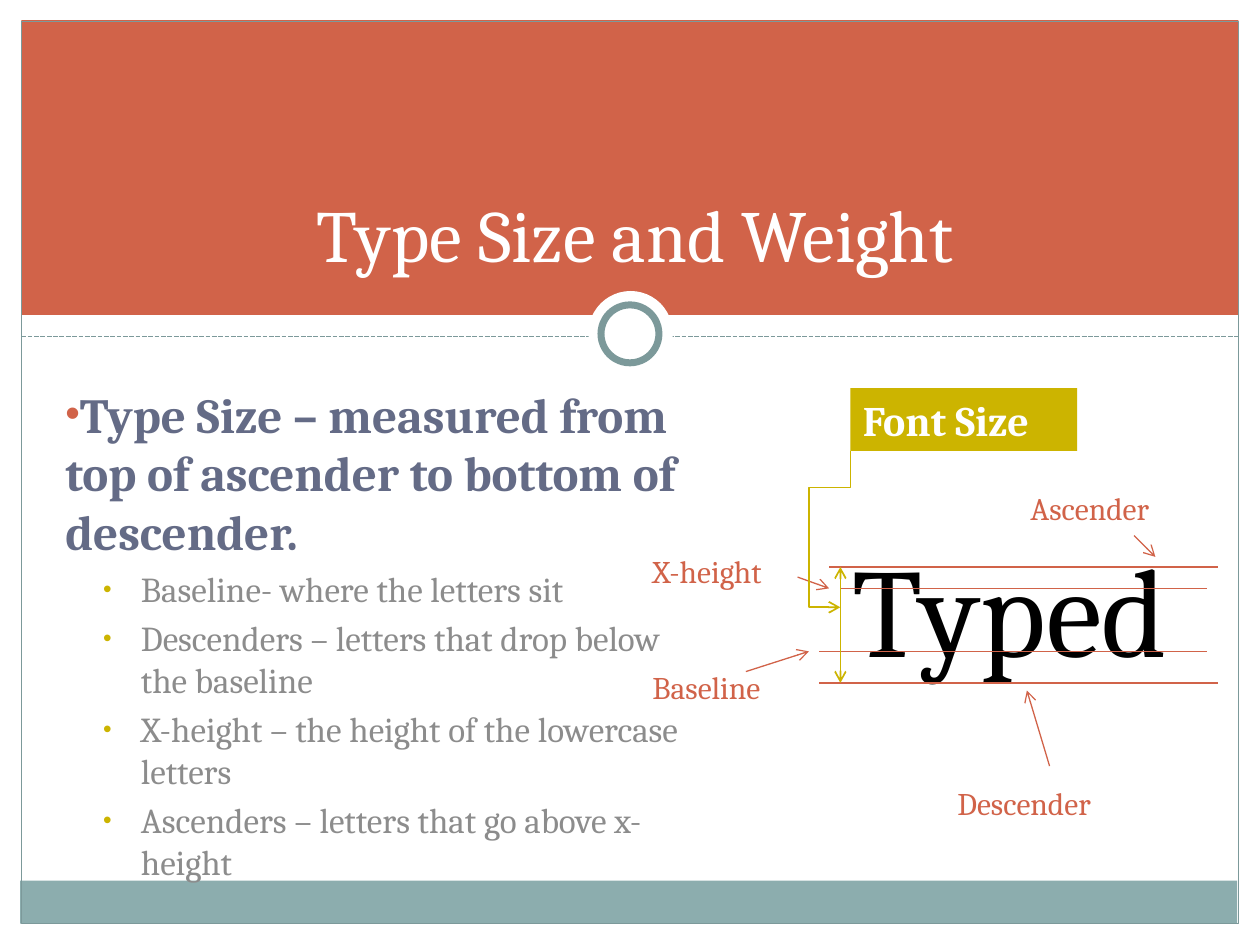
from lxml import etree
from pptx import Presentation
from pptx.dml.color import RGBColor
from pptx.enum.dml import MSO_LINE
from pptx.enum.shapes import MSO_CONNECTOR, MSO_SHAPE
from pptx.enum.text import MSO_ANCHOR, PP_ALIGN
from pptx.oxml.ns import qn
from pptx.util import Inches, Pt

RECTANGLE, OVAL = MSO_SHAPE.RECTANGLE, MSO_SHAPE.OVAL
STRAIGHT = MSO_CONNECTOR.STRAIGHT
SHORT_DASH = MSO_LINE.SQUARE_DOT
TOP, BOTTOM = MSO_ANCHOR.TOP, MSO_ANCHOR.BOTTOM
LEFT, CENTER = PP_ALIGN.LEFT, PP_ALIGN.CENTER

FONT = "Cambria"
COLORS = {
    "white": "FFFFFF",
    "black": "000000",
    "coral": "D16349",
    "sage": "8CADAE",
    "teal": "7C999A",
    "gold": "CCB400",
    "slate": "646B86",
    "gray": "8C8C8C",
}
ASCENDER_Y, X_HEIGHT_Y, BASELINE_Y, DESCENDER_Y = 4.5, 4.67, 5.17, 5.42
MEASURE_X = 6.67

GUIDES = [
    (6.58, 9.67, ASCENDER_Y),
    (MEASURE_X, 9.58, X_HEIGHT_Y),
    (6.5, 9.58, BASELINE_Y),
    (6.5, 9.67, DESCENDER_Y),
]
LABELS = [
    ("Ascender", (8.08, 3.83, 1.25, 0.4), (9, 4.25), (9.17, 4.42)),
    ("Descender", (7.5, 6.17, 1.38, 0.4), (8.33, 6.08), (8.15, 5.48)),
    ("Baseline", (5.08, 5.25, 1.14, 0.4), (5.92, 5.33), (6.42, BASELINE_Y)),
    ("X-height", (5.08, 4.33, 1.18, 0.4), (6.33, 4.58), (6.58, X_HEIGHT_Y)),
]
DEFINITION = "Type Size – measured from top of ascender to bottom of descender."
TERMS = [
    "Baseline- where the letters sit",
    "Descenders – letters that drop below the baseline",
    "X-height – the height of the lowercase letters",
    "Ascenders – letters that go above x-height",
]


def rgb(name):
    """Return the palette colour with this name."""
    return RGBColor.from_string(COLORS[name])


def style_line(line, color, width):
    """Give a line its colour and its width in points."""
    line.color.rgb = rgb(color)
    line.width = Pt(width)


def add_panel(slide, kind, box, fill=None, outline=None, width=0.75):
    """Add a preset shape with an optional fill and outline."""
    panel = slide.shapes.add_shape(kind, *map(Inches, box))
    panel.shadow.inherit = False
    if fill:
        panel.fill.solid()
        panel.fill.fore_color.rgb = rgb(fill)
    else:
        panel.fill.background()
    if outline:
        style_line(panel.line, outline, width)
    else:
        panel.line.fill.background()


def add_arrowheads(line, ends):
    """Put open arrowheads on the named ends of a line."""
    for end in ends:
        etree.SubElement(line._get_or_add_ln(), qn(f"a:{end}"), type="arrow")


def add_rule(slide, start, end, color="coral", width=0.75, ends=()):
    """Add a straight connector and return it."""
    rule = slide.shapes.add_connector(STRAIGHT, *map(Inches, (*start, *end)))
    etree.SubElement(rule._element.spPr, qn("a:effectLst"))
    style_line(rule.line, color, width)
    add_arrowheads(rule.line, ends)
    return rule


def add_elbow(slide, points, color, width):
    """Add a bent leader that ends in an arrowhead."""
    start, *bends = [tuple(map(Inches, point)) for point in points]
    builder = slide.shapes.build_freeform(*start)
    builder.add_line_segments(bends, close=False)
    leader = builder.convert_to_shape()
    leader.shadow.inherit = False
    leader.fill.background()
    style_line(leader.line, color, width)
    add_arrowheads(leader.line, ["tailEnd"])


def write(paragraph, text, size, color, bold=False):
    """Write one styled run of text into a paragraph."""
    paragraph.text = text
    font = paragraph.runs[0].font
    font.name, font.size, font.bold = FONT, Pt(size), bold
    font.color.rgb = rgb(color)


def add_text(slide, box, text, size, color, bold=False, align=LEFT, anchor=TOP):
    """Add a text box with one paragraph and return it."""
    text_box = slide.shapes.add_textbox(*map(Inches, box))
    frame = text_box.text_frame
    frame.word_wrap = True
    frame.vertical_anchor = anchor
    frame.paragraphs[0].alignment = align
    write(frame.paragraphs[0], text, size, color, bold)
    return text_box


def add_bullet(paragraph, color, percent, space, margin=0, indent=0):
    """Give a paragraph a coloured bullet, spacing and indents."""
    paragraph.space_before = Pt(space)
    properties = paragraph._p.get_or_add_pPr()
    properties.set("marL", str(Inches(margin)))
    properties.set("indent", str(Inches(indent)))
    bullet_color = etree.SubElement(properties, qn("a:buClr"))
    etree.SubElement(bullet_color, qn("a:srgbClr"), val=COLORS[color])
    etree.SubElement(properties, qn("a:buSzPct"), val=str(percent * 1000))
    etree.SubElement(properties, qn("a:buFont"), typeface="Arial")
    etree.SubElement(properties, qn("a:buChar"), char="•")


def add_backdrop(slide):
    """Draw the title band, footer, frame and ring."""
    add_panel(slide, RECTANGLE, (0.17, 0.16, 9.66, 2.34), "coral")
    add_panel(slide, RECTANGLE, (0.16, 6.99, 9.66, 0.34), "sage")
    add_panel(slide, RECTANGLE, (0.17, 0.17, 9.66, 7.16), outline="teal")
    divider = add_rule(slide, (0.17, 2.67), (9.83, 2.67), "teal", 0.9)
    divider.line.dash_style = SHORT_DASH
    add_panel(slide, OVAL, (4.67, 2.31, 0.67, 0.67), "white")
    add_panel(slide, OVAL, (4.77, 2.42, 0.46, 0.46), "white", "teal", 4)


def add_definitions(slide):
    """Write the definition of type size and its terms."""
    body = add_text(slide, (0.42, 3, 5.17, 3.83), DEFINITION, 28, "slate", True)
    frame = body.text_frame
    add_bullet(frame.paragraphs[0], "coral", 85, 5.6)
    for term in TERMS:
        paragraph = frame.add_paragraph()
        paragraph.level = 1
        write(paragraph, term, 20, "gray")
        add_bullet(paragraph, "gold", 70, 4, 0.6, -0.3)


def add_type_diagram(slide):
    """Draw the sample word with its guides, labels and measure."""
    add_text(slide, (6.67, 4.17, 2.97, 1.31), "Typed", 72, "black")
    for left, right, y in GUIDES:
        add_rule(slide, (left, y), (right, y))
    for label, box, start, end in LABELS:
        add_text(slide, box, label, 18, "coral")
        add_rule(slide, start, end, ends=["tailEnd"])
    size_tag = add_text(slide, (6.75, 3.08, 1.8, 0.5), "Font Size", 24, "white", True)
    size_tag.fill.solid()
    size_tag.fill.fore_color.rgb = rgb("gold")
    leader = [(6.75, 3.58), (6.75, 3.87), (6.42, 3.87), (6.42, 4.82), (MEASURE_X, 4.82)]
    add_elbow(slide, leader, "gold", 1)
    add_rule(slide, (MEASURE_X, ASCENDER_Y), (MEASURE_X, DESCENDER_Y), "gold", 1,
             ["headEnd", "tailEnd"])


def main():
    """Build the slide and save it."""
    deck = Presentation()
    deck.slide_width, deck.slide_height = Inches(10), Inches(7.5)
    slide = deck.slides.add_slide(deck.slide_layouts[6])
    add_backdrop(slide)
    add_definitions(slide)
    add_text(slide, (0.79, 0.58, 8.5, 1.67), "Type Size and Weight", 42, "white",
             align=CENTER, anchor=BOTTOM)
    add_type_diagram(slide)
    deck.save("out.pptx")


if __name__ == "__main__":
    main()
